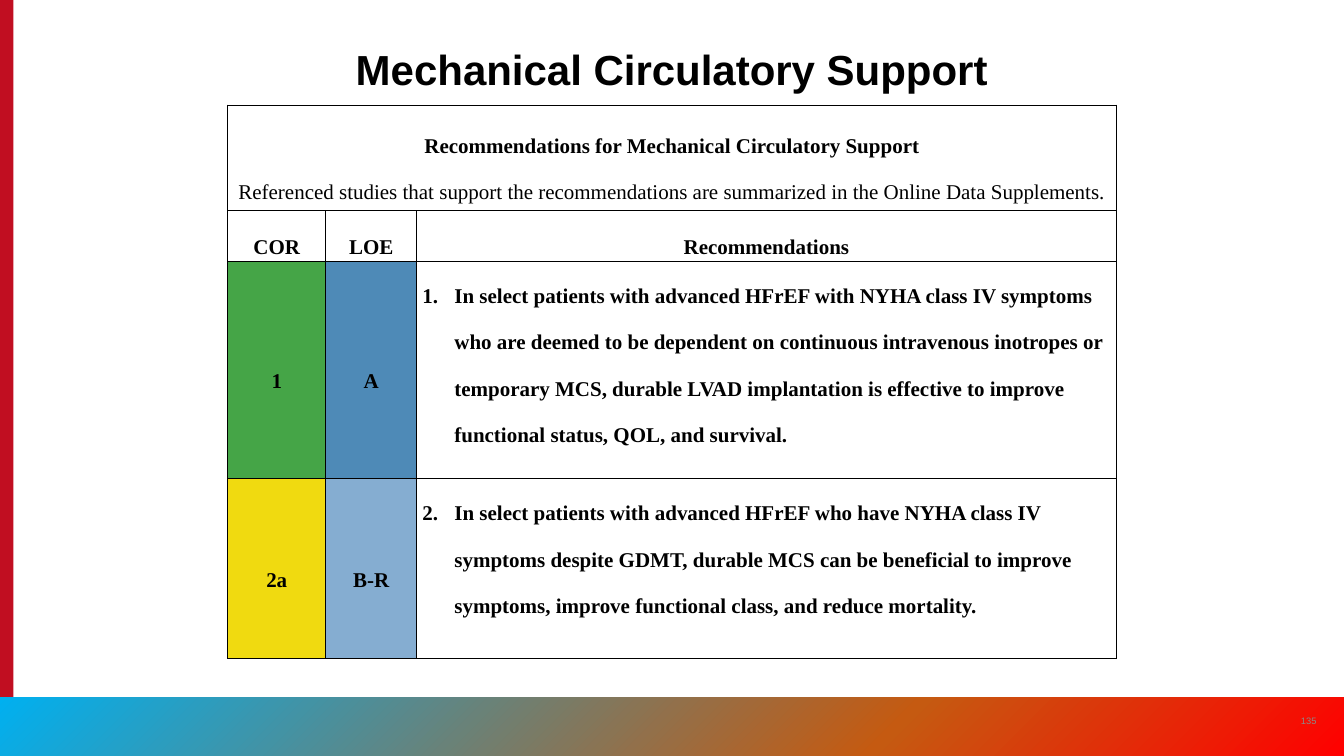
"""Build the slide of recommendations for mechanical circulatory support."""
from lxml.etree import SubElement
from pptx import Presentation
from pptx.dml.color import RGBColor as Rgb
from pptx.enum.shapes import MSO_SHAPE as Preset
from pptx.enum.text import MSO_ANCHOR as Anchor, PP_ALIGN as Align
from pptx.oxml import parse_xml
from pptx.oxml.ns import nsdecls, qn
from pptx.util import Inches, Pt

COLORS = {
    "black": "000000", "red": "C10E21", "grey": "8A8B8A",
    "sky": "00B0F0", "rust": "C55A11", "scarlet": "FF0000",
    "green": "45A547", "blue": "4E8AB7", "yellow": "F0DA10", "pale": "85ADD1",
}
WIDTH, HEIGHT = 16, 9
FOOTER_TOP = 8.3
COLUMNS = [1.17, 1.08, 8.33]
ROWS = [1.26, 0.45, 2.59, 2.14]
INDENT = 0.38


def format_text(paragraph, font, size, color, bold=False, align=Align.CENTER):
    paragraph.alignment = align
    for run in paragraph.runs:
        run.font.name, run.font.size, run.font.bold = font, Pt(size), bold
        run.font.color.rgb = Rgb.from_string(COLORS[color])


def add_band(left, top, width, height):
    band = slide.shapes.add_shape(
        Preset.RECTANGLE, Inches(left), Inches(top), Inches(width), Inches(height))
    band.shadow.inherit = False
    band.line.fill.background()
    return band


deck = Presentation()
deck.slide_width, deck.slide_height = Inches(WIDTH), Inches(HEIGHT)
slide = deck.slides.add_slide(deck.slide_layouts[6])

side_band = add_band(0, 0, 0.16, HEIGHT)
side_band.fill.solid()
side_band.fill.fore_color.rgb = Rgb.from_string(COLORS["red"])

footer = add_band(0, FOOTER_TOP, WIDTH, HEIGHT - FOOTER_TOP)
stops = "".join(
    f'<a:gs pos="{share * 1000}"><a:srgbClr val="{COLORS[color]}"/></a:gs>'
    for share, color in [(0, "sky"), (66, "rust"), (100, "scarlet")])
footer.element.spPr.find(qn("a:prstGeom")).addnext(parse_xml(
    f'<a:gradFill {nsdecls("a")} rotWithShape="1"><a:gsLst>{stops}</a:gsLst>'
    '<a:lin ang="2700000" scaled="0"/></a:gradFill>'))

captions = [
    ("135", 15.34, 8.34, 0.48, 0.48, 8, "grey", False, Anchor.MIDDLE, 1),
    ("Mechanical Circulatory Support", 3.97, 0.54, 8.06, 0.74, 36, "black", True,
     Anchor.TOP, 0.9),
]
for words, left, top, width, height, size, color, bold, anchor, spacing in captions:
    caption = slide.shapes.add_textbox(
        Inches(left), Inches(top), Inches(width), Inches(height)).text_frame
    caption.word_wrap = True
    caption.vertical_anchor = anchor
    caption.text = words
    caption.paragraphs[0].line_spacing = spacing
    format_text(caption.paragraphs[0], "Arial", size, color, bold)

content = [
    ["Recommendations for Mechanical Circulatory Support\n"
     "Referenced studies that support the recommendations are summarized in the "
     "Online Data Supplements.", "", ""],
    ["COR", "LOE", "Recommendations"],
    ["1", "A",
     "In select patients with advanced HFrEF with NYHA class IV symptoms who are deemed "
     "to be dependent on continuous intravenous inotropes or temporary MCS, durable LVAD "
     "implantation is effective to improve functional status, QOL, and survival."],
    ["2a", "B-R",
     "In select patients with advanced HFrEF who have NYHA class IV symptoms despite GDMT, "
     "durable MCS can be beneficial to improve symptoms, improve functional class, and "
     "reduce mortality."],
]
ratings = {(2, 0): "green", (2, 1): "blue", (3, 0): "yellow", (3, 1): "pale"}

table = slide.shapes.add_table(
    len(ROWS), len(COLUMNS), Inches((WIDTH - sum(COLUMNS)) / 2), Inches(1.25),
    Inches(sum(COLUMNS)), Inches(sum(ROWS))).table
table.first_row = table.horz_banding = False
for column, width in zip(table.columns, COLUMNS):
    column.width = Inches(width)
for row, height in zip(table.rows, ROWS):
    row.height = Inches(height)
table.cell(0, 0).merge(table.cell(0, 2))

for r, texts in enumerate(content):
    for c, words in enumerate(texts):
        cell = table.cell(r, c)
        is_advice = r >= 2 and c == 2
        cell.margin_left = cell.margin_right = Inches(0.07)
        cell.margin_top = cell.margin_bottom = 0
        cell.vertical_anchor = Anchor.TOP if is_advice else Anchor.MIDDLE
        for side in ("lnL", "lnR", "lnT", "lnB"):
            border = SubElement(cell._tc.tcPr, qn(f"a:{side}"), w=str(Pt(1)))
            ink = SubElement(border, qn("a:solidFill"))
            SubElement(ink, qn("a:srgbClr"), val=COLORS["black"])
        if (r, c) in ratings:
            cell.fill.solid()
            cell.fill.fore_color.rgb = Rgb.from_string(COLORS[ratings[r, c]])
        else:
            cell.fill.background()
        if not words:
            continue
        cell.text_frame.text = words
        for i, paragraph in enumerate(cell.text_frame.paragraphs):
            if is_advice:
                props = paragraph._p.get_or_add_pPr()
                props.set("marL", str(Inches(INDENT)))
                props.set("indent", str(-Inches(INDENT)))
                SubElement(props, qn("a:buAutoNum"), type="arabicPeriod", startAt=str(r - 1))
                tabs = SubElement(props, qn("a:tabLst"))
                SubElement(tabs, qn("a:tab"), pos=str(Inches(0.25)), algn="l")
            paragraph.line_spacing = 2.0
            format_text(paragraph, "Times New Roman", 18, "black", i == 0,
                        Align.LEFT if is_advice else Align.CENTER)

deck.save("out.pptx")
